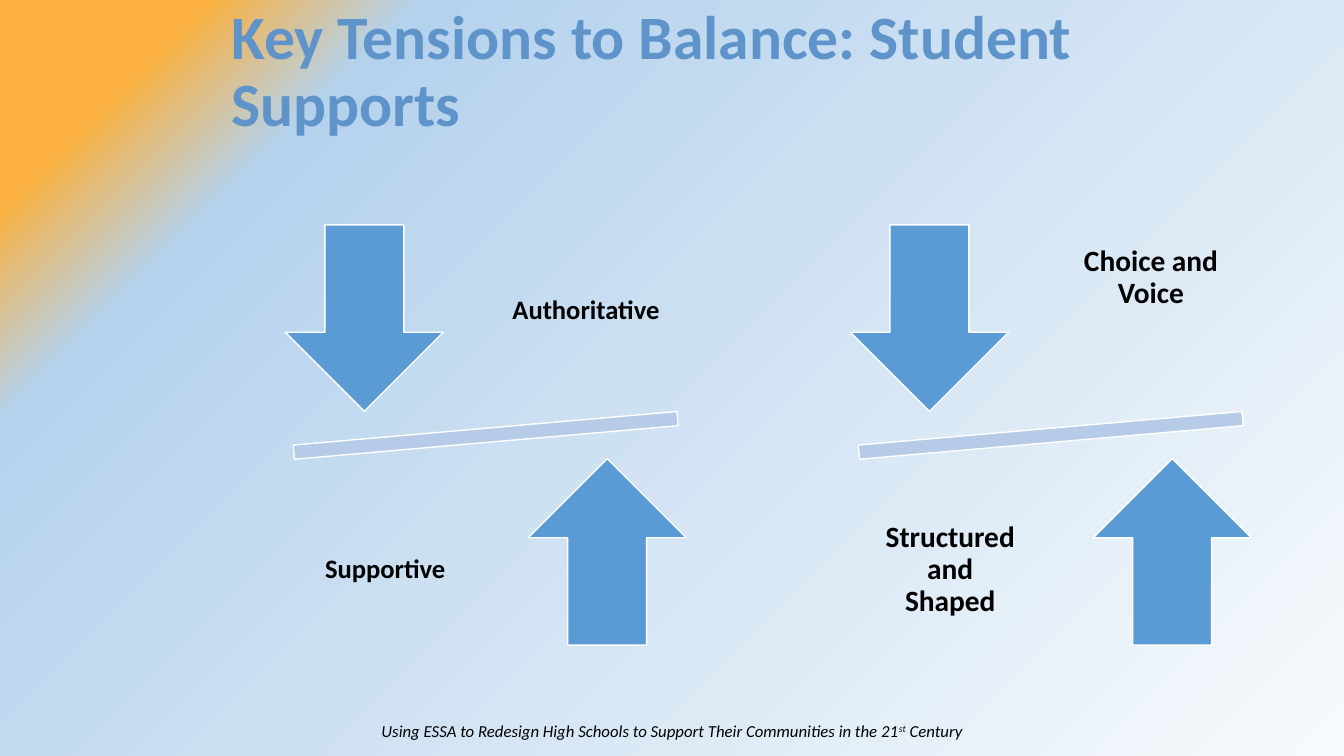
from dataclasses import dataclass

from pptx import Presentation
from pptx.dml.color import RGBColor
from pptx.enum.shapes import MSO_SHAPE
from pptx.enum.text import MSO_ANCHOR, PP_ALIGN
from pptx.oxml import parse_xml
from pptx.oxml.ns import nsdecls, qn
from pptx.shapes.autoshape import Shape
from pptx.shapes.shapetree import GroupShapes
from pptx.slide import Slide
from pptx.text.text import _Paragraph, _Run
from pptx.util import Pt

TITLE_BLUE = RGBColor(0x5E, 0x94, 0xCA)
ARROW_BLUE = RGBColor(0x5B, 0x9B, 0xD5)
BEAM_BLUE = RGBColor(0xB5, 0xCB, 0xE7)
PALE_BLUE = RGBColor(0xF7, 0xFA, 0xFD)
SKY_BLUE = RGBColor(0xB5, 0xD2, 0xEC)
ORANGE = RGBColor(0xFB, 0xB0, 0x40)
BLACK = RGBColor(0, 0, 0)
WHITE = RGBColor(255, 255, 255)

TITLE_FONT = {"name": "Calibri", "size": Pt(44), "bold": True}
FOOTER_FONT = {"name": "Calibri", "size": Pt(12), "italic": True}

WIDTH, HEIGHT = 960, 540
PANEL_STEP = 403.6
ARROW_SIZE = (113, 133.2)
LABEL_HEIGHT = 140.4


@dataclass
class GradientStop:
    percent: int
    color: RGBColor
    alpha: int = 100


@dataclass
class Label:
    text: str
    size: float
    width: float
    inset: float
    extra_top: float = 0
    extra_bottom: float = 0


@dataclass
class Balance:
    upper: Label
    lower: Label


STOPS = [
    GradientStop(0, PALE_BLUE),
    GradientStop(80, SKY_BLUE, 50),
    GradientStop(90, ORANGE, 55),
    GradientStop(100, ORANGE),
]

BALANCES = [
    Balance(
        Label("Authoritative", 19, 141.8, 8.6, extra_top=16),
        Label("Supportive", 19, 120.2, 10.8),
    ),
    Balance(
        Label("Choice and Voice", 21, 120.2, 11.5, extra_bottom=31),
        Label("Structured and Shaped", 21, 120.2, 11.5),
    ),
]


def set_background(s: Slide) -> None:
    """Fill the slide with a gradient spreading from the bottom right corner."""
    stops = "".join(
        f'<a:gs pos="{stop.percent * 1000}"><a:srgbClr val="{stop.color}">'
        f'<a:alpha val="{stop.alpha * 1000}"/></a:srgbClr></a:gs>'
        for stop in STOPS
    )
    s.background.fill.gradient()
    old = s.element.find(".//" + qn("a:gradFill"))
    old.getparent().replace(old, parse_xml(
        f'<a:gradFill {nsdecls("a")} rotWithShape="1"><a:gsLst>{stops}</a:gsLst>'
        '<a:path path="circle"><a:fillToRect l="100000" t="100000"/></a:path>'
        '<a:tileRect r="-100000" b="-100000"/></a:gradFill>'
    ))


def add_run(p: _Paragraph, text: str, font: dict, color: RGBColor) -> _Run:
    r = p.add_run()
    r.text = text
    for name, value in font.items():
        setattr(r.font, name, value)
    r.font.color.rgb = color
    return r


def add_text_box(shapes: GroupShapes, left: float, top: float,
                 width: float, height: float, **frame) -> _Paragraph:
    """Add a wrapping text box and return its first paragraph."""
    tf = shapes.add_textbox(Pt(left), Pt(top), Pt(width), Pt(height)).text_frame
    tf.word_wrap = True
    for name, value in frame.items():
        setattr(tf, name, value)
    return tf.paragraphs[0]


def add_filled_shape(shapes: GroupShapes, kind: MSO_SHAPE, left: float, top: float,
                     width: float, height: float, color: RGBColor) -> Shape:
    sp = shapes.add_shape(kind, Pt(left), Pt(top), Pt(width), Pt(height))
    sp.shadow.inherit = False
    sp.fill.solid()
    sp.fill.fore_color.rgb = color
    sp.line.color.rgb = WHITE
    sp.line.width = Pt(1)
    return sp


def add_label(shapes: GroupShapes, label: Label, center: float, top: float) -> None:
    p = add_text_box(
        shapes, center - label.width / 2, top, label.width, LABEL_HEIGHT,
        vertical_anchor=MSO_ANCHOR.MIDDLE,
        margin_left=Pt(label.inset), margin_right=Pt(label.inset),
        margin_top=Pt(label.inset + label.extra_top),
        margin_bottom=Pt(label.inset + label.extra_bottom),
    )
    p.alignment = PP_ALIGN.CENTER
    p.line_spacing = 0.9
    font = {"name": "Calibri", "size": Pt(label.size), "bold": True}
    add_run(p, label.text, font, BLACK)


def add_balance(s: Slide, balance: Balance, dx: float) -> None:
    shapes = s.shapes.add_group_shape().shapes
    beam = add_filled_shape(shapes, MSO_SHAPE.MATH_MINUS, 159.8 + dx, 289.4,
                            374.4, 43.2, BEAM_BLUE)
    beam.rotation = 355
    add_filled_shape(shapes, MSO_SHAPE.DOWN_ARROW, 203.8 + dx, 160.6,
                     *ARROW_SIZE, ARROW_BLUE)
    add_label(shapes, balance.upper, 418.6 + dx, 144)
    add_filled_shape(shapes, MSO_SHAPE.UP_ARROW, 377.2 + dx, 327.6,
                     *ARROW_SIZE, ARROW_BLUE)
    add_label(shapes, balance.lower, 275.2 + dx, 337)


def add_title(s: Slide) -> None:
    p = add_text_box(s.shapes, 158.4, 0, 780.5, 104.4,
                     vertical_anchor=MSO_ANCHOR.MIDDLE)
    p.line_spacing = 0.9
    add_run(p, "Key Tensions to Balance: Student Supports", TITLE_FONT, TITLE_BLUE)


def add_footer(s: Slide) -> None:
    p = add_text_box(s.shapes, 0, 511.2, WIDTH, 21.6)
    p.alignment = PP_ALIGN.CENTER
    add_run(p, "Using ESSA to Redesign High Schools to Support Their Communities in the 21",
            FOOTER_FONT, BLACK)
    ordinal = add_run(p, "st", FOOTER_FONT, BLACK)
    ordinal.font._element.set("baseline", "30000")
    add_run(p, " Century", FOOTER_FONT, BLACK)


def main() -> None:
    prs = Presentation()
    prs.slide_width, prs.slide_height = Pt(WIDTH), Pt(HEIGHT)
    s = prs.slides.add_slide(prs.slide_layouts[6])
    set_background(s)
    add_footer(s)
    add_title(s)
    for i, balance in enumerate(BALANCES):
        add_balance(s, balance, i * PANEL_STEP)
    prs.save("out.pptx")


if __name__ == "__main__":
    main()
